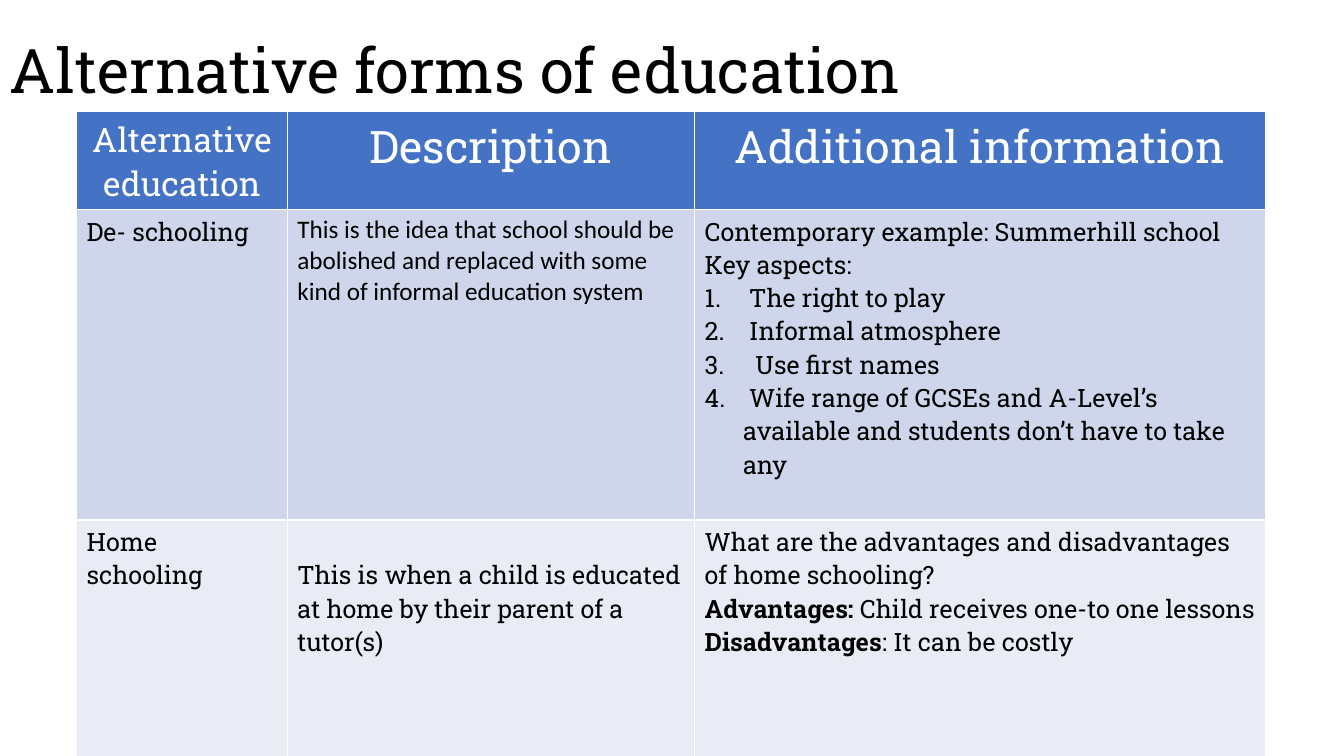
"""Build a slide with a table of alternative forms of education."""
from lxml.etree import SubElement
from pptx import Presentation
from pptx.dml.color import RGBColor
from pptx.enum.text import MSO_ANCHOR, PP_ALIGN
from pptx.oxml.ns import qn
from pptx.util import Inches, Pt

BLACK = RGBColor(0x00, 0x00, 0x00)
WHITE = RGBColor(0xFF, 0xFF, 0xFF)
HEADER_BLUE = RGBColor(0x44, 0x72, 0xC4)
BAND_DARK = RGBColor(0xCF, 0xD5, 0xEA)
BAND_LIGHT = RGBColor(0xE9, 0xEB, 0xF5)
SLAB = "Roboto Slab"
SANS = "Calibri"

TITLE = "Alternative forms of education"
HEADERS = [("Alternative education", 24), ("Description", 32), ("Additional information", 32)]
DE_SCHOOLING = [
    ["De- schooling"],
    ["This is the idea that school should be abolished and replaced with some "
     "kind of informal education system"],
    ["Contemporary example: Summerhill school", "Key aspects:"],
]
KEY_ASPECTS = [
    (" The right to play", 0.38),
    (" Informal atmosphere", 0.38),
    (" Use first names", 0.44),
    (" Wife range of GCSEs and A-Level’s available and students don’t have to take any", 0.38),
]
HOME_SCHOOLING = [
    ["Home schooling"],
    ["This is when a child is educated at home by their parent of a tutor(s)"],
    ["What are the advantages and disadvantages of home schooling?"],
]
PROS_AND_CONS = [
    ("Advantages:", " Child receives one-to one lessons"),
    ("Disadvantages", ": It can be costly"),
]
COLUMN_WIDTHS = [2.09, 4.04, 5.66]
ROW_HEIGHTS = [0.97, 3.08, 2.48]
BODY_SIZE = 18


def add_run(paragraph, text, size=BODY_SIZE, color=BLACK, font=SLAB, bold=False):
    run = paragraph.add_run()
    run.text = text
    run.font.size = Pt(size)
    run.font.name = font
    run.font.bold = bold
    run.font.color.rgb = color


def number_paragraph(paragraph, indent):
    properties = paragraph._p.get_or_add_pPr()
    properties.set("marL", str(Inches(indent)))
    properties.set("indent", str(-Inches(indent)))
    SubElement(properties, qn("a:buFont"), typeface="+mj-lt")
    SubElement(properties, qn("a:buAutoNum"), type="arabicPeriod")


def style_cell(cell, fill):
    properties = cell._tc.get_or_add_tcPr()
    for side in ("a:lnL", "a:lnR", "a:lnT", "a:lnB"):
        line = SubElement(properties, qn(side), w=str(Pt(1)))
        SubElement(SubElement(line, qn("a:solidFill")), qn("a:srgbClr"), val=str(WHITE))
    cell.fill.solid()
    cell.fill.fore_color.rgb = fill


def fill_body_row(table, row, texts, fill):
    for column, lines in enumerate(texts):
        cell = table.cell(row, column)
        style_cell(cell, fill)
        for index, line in enumerate(lines):
            frame = cell.text_frame
            paragraph = frame.add_paragraph() if index else frame.paragraphs[0]
            add_run(paragraph, line, font=SANS if (row, column) == (1, 1) else SLAB)


def add_title(slide):
    frame = slide.shapes.add_textbox(0, 0, Inches(11.5), Inches(1.45)).text_frame
    frame.word_wrap = True
    frame.vertical_anchor = MSO_ANCHOR.MIDDLE
    frame.paragraphs[0].line_spacing = 0.9
    add_run(frame.paragraphs[0], TITLE, 44)


def add_education_table(slide):
    table = slide.shapes.add_table(
        len(ROW_HEIGHTS), len(COLUMN_WIDTHS), Inches(0.76), Inches(1.11),
        Inches(sum(COLUMN_WIDTHS)), Inches(sum(ROW_HEIGHTS))).table
    for column, width in zip(table.columns, COLUMN_WIDTHS):
        column.width = Inches(width)
    for row, height in zip(table.rows, ROW_HEIGHTS):
        row.height = Inches(height)

    for column, (heading, size) in enumerate(HEADERS):
        cell = table.cell(0, column)
        style_cell(cell, HEADER_BLUE)
        paragraph = cell.text_frame.paragraphs[0]
        paragraph.alignment = PP_ALIGN.CENTER
        add_run(paragraph, heading, size, WHITE)

    fill_body_row(table, 1, DE_SCHOOLING, BAND_DARK)
    fill_body_row(table, 2, HOME_SCHOOLING, BAND_LIGHT)
    table.cell(2, 1).margin_top = Inches(0.38)
    for aspect, indent in KEY_ASPECTS:
        paragraph = table.cell(1, 2).text_frame.add_paragraph()
        number_paragraph(paragraph, indent)
        add_run(paragraph, aspect)
    for label, detail in PROS_AND_CONS:
        paragraph = table.cell(2, 2).text_frame.add_paragraph()
        add_run(paragraph, label, bold=True)
        add_run(paragraph, detail)


def main():
    presentation = Presentation()
    presentation.slide_width = Inches(13.33)
    presentation.slide_height = Inches(7.5)
    slide = presentation.slides.add_slide(presentation.slide_layouts[6])
    add_title(slide)
    add_education_table(slide)
    presentation.save("out.pptx")


if __name__ == "__main__":
    main()
